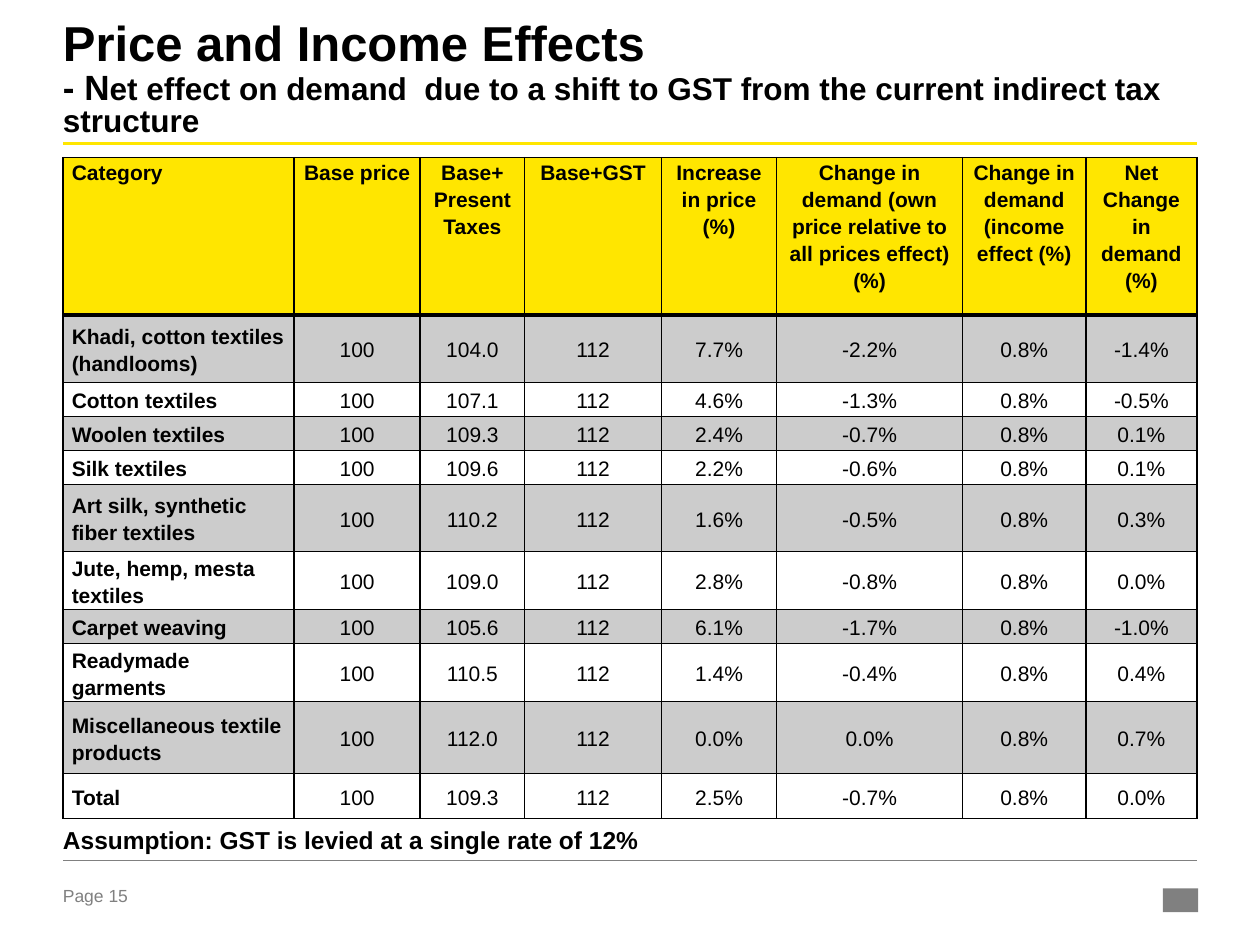
from dataclasses import dataclass
from typing import Any

from lxml import etree
from pptx import Presentation
from pptx.dml import color
from pptx.enum import shapes, text
from pptx.oxml import ns
from pptx.util import Inches, Pt

COLUMN_WIDTHS = [3.67, 2, 1.66, 2.17, 1.83, 2.95, 1.96, 1.76]
ROW_HEIGHTS = [2.5, 1.07, 0.54, 0.54, 0.54, 1.07, 0.54, 0.54, 0.54, 1.14, 0.72]
HEADINGS = [
    "Category", "Base price", "Base+ Present Taxes", "Base+GST", "Increase in price (%)",
    "Change in demand (own price relative to all prices effect) (%)",
    "Change in demand (income effect (%)", "Net Change in demand (%)",
]
EFFECTS = [
    ("Khadi, cotton textiles (handlooms)", "104.0", "7.7%", "-2.2%", "-1.4%"),
    ("Cotton textiles", "107.1", "4.6%", "-1.3%", "-0.5%"),
    ("Woolen textiles", "109.3", "2.4%", "-0.7%", "0.1%"),
    ("Silk textiles", "109.6", "2.2%", "-0.6%", "0.1%"),
    ("Art silk, synthetic fiber textiles", "110.2", "1.6%", "-0.5%", "0.3%"),
    ("Jute, hemp, mesta textiles", "109.0", "2.8%", "-0.8%", "0.0%"),
    ("Carpet weaving", "105.6", "6.1%", "-1.7%", "-1.0%"),
    ("Readymade garments", "110.5", "1.4%", "-0.4%", "0.4%"),
    ("Miscellaneous textile products", "112.0", "0.0%", "0.0%", "0.7%"),
    ("Total", "109.3", "2.5%", "-0.7%", "0.0%"),
]


def rgb(value):
    """Turn a hex string into a colour."""
    return color.RGBColor.from_string(value)


@dataclass
class Painter:
    """Style and current slide, on a grid of 20 columns by 15 rows."""

    page: Any
    unit: int = Inches(0.5)
    font: str = "Arial"
    ink: str = "000000"
    grey: str = "808080"
    accent: str = "FFE600"

    def grid(self, *cells):
        """Convert grid steps to slide lengths."""
        return [round(cell * self.unit) for cell in cells]

    def span(self, para, words, size, bold=False, ink=None):
        """Add one styled run."""
        span = para.add_run()
        span.text = words
        span.font.name, span.font.size, span.font.bold = self.font, Pt(size), bold
        span.font.color.rgb = rgb(ink or self.ink)

    def label(self, place, lines, spacing=0.85, after=0, top=0, bold=True, ink=None):
        """Add a text box whose lines are lists of (words, size)."""
        box = self.page.shapes.add_textbox(*self.grid(*place))
        frame = box.text_frame
        frame.word_wrap = True
        frame.margin_left = frame.margin_right = frame.margin_bottom = 0
        frame.margin_top = Inches(top)
        para = frame.paragraphs[0]
        para.line_spacing, para.space_after = spacing, Pt(after)
        for number, line in enumerate(lines):
            if number:
                para.add_line_break()
            for words, size in line:
                self.span(para, words, size, bold, ink)

    def rule(self, row, ink, width):
        """Draw a line across the content area."""
        line = self.page.shapes.add_connector(
            shapes.MSO_CONNECTOR.STRAIGHT, *self.grid(1, row, 19, row))
        line.line.color.rgb, line.line.width = rgb(ink), Pt(width)
        etree.SubElement(line._element.spPr, ns.qn("a:effectLst"))

    def block(self, place):
        """Draw a plain grey rectangle."""
        block = self.page.shapes.add_shape(shapes.MSO_SHAPE.RECTANGLE, *self.grid(*place))
        block.shadow.inherit = False
        block.fill.solid()
        block.fill.fore_color.rgb = rgb(self.grey)
        block.line.fill.background()

    def border(self, cell, side, width):
        """Add a solid border to one side of a cell."""
        edge = etree.SubElement(cell._tc.get_or_add_tcPr(), ns.qn(f"a:ln{side}"), w=str(Pt(width)))
        fill = etree.SubElement(edge, ns.qn("a:solidFill"))
        etree.SubElement(fill, ns.qn("a:srgbClr"), val=self.ink)

    def shade(self, cell, row):
        """Fill headings with the accent and odd rows with faint ink."""
        if row and row % 2 == 0:
            cell.fill.background()
            return
        cell.fill.solid()
        cell.fill.fore_color.rgb = rgb(self.ink if row else self.accent)
        if row:
            tint = cell._tc.tcPr.find(f"{ns.qn('a:solidFill')}/{ns.qn('a:srgbClr')}")
            etree.SubElement(tint, ns.qn("a:alpha"), val="20000")

    def cell(self, cell, row, column, words):
        """Style and fill one table cell."""
        cell.margin_left = cell.margin_right = Inches(0.07)
        cell.margin_top = cell.margin_bottom = 0
        cell.vertical_anchor = text.MSO_ANCHOR.MIDDLE if row else text.MSO_ANCHOR.TOP
        for side in "LRTB":
            self.border(cell, side, 2 if (row, side) in [(0, "B"), (1, "T")] else 1)
        self.shade(cell, row)
        para = cell.text_frame.paragraphs[0]
        para.line_spacing = 1.15
        para.alignment = text.PP_ALIGN.CENTER if column else text.PP_ALIGN.LEFT
        self.span(para, words, 12, bold=row == 0 or column == 0)

    def table(self, left, top, widths, heights, rows):
        """Add a table sized by grid steps."""
        place = self.grid(left, top, sum(widths), sum(heights))
        table = self.page.shapes.add_table(len(rows), len(widths), *place).table
        table.horz_banding = table.first_row = False
        for column, width in zip(table.columns, self.grid(*widths)):
            column.width = width
        for row, height in zip(table.rows, self.grid(*heights)):
            row.height = height
        for row, values in enumerate(rows):
            for column, words in enumerate(values):
                self.cell(table.cell(row, column), row, column, words)


def main():
    """Build the slide and save it."""
    deck = Presentation()
    deck.slide_width, deck.slide_height = Inches(10), Inches(7.5)
    painter = Painter(deck.slides.add_slide(deck.slide_layouts[6]))
    painter.label((1, 14.04, 1.46, 0.44), [[("Page 15", 10)]], 1, bold=False, ink=painter.grey)
    painter.block((18.46, 14.1, 0.56, 0.38))
    painter.rule(2.28, painter.accent, 1.5)
    painter.rule(13.66, painter.grey, 0.25)
    rows = [HEADINGS] + [
        [name, "100", taxed, "112", rise, own, "0.8%", net]
        for name, taxed, rise, own, net in EFFECTS
    ]
    painter.table(1, 2.5, COLUMN_WIDTHS, ROW_HEIGHTS, rows)
    painter.label((1, 0.34, 18, 1.7), [
        [("Price and Income Effects", 28)],
        [("- N", 20), ("et effect on demand  due to a shift to GST from the current "
                       "indirect tax structure", 18)],
    ])
    painter.label((1, 13.08, 9.66, 0.48),
                  [[("Assumption: GST is levied at a single rate of 12%", 14)]], after=6, top=0.04)
    deck.save("out.pptx")


if __name__ == "__main__":
    main()
